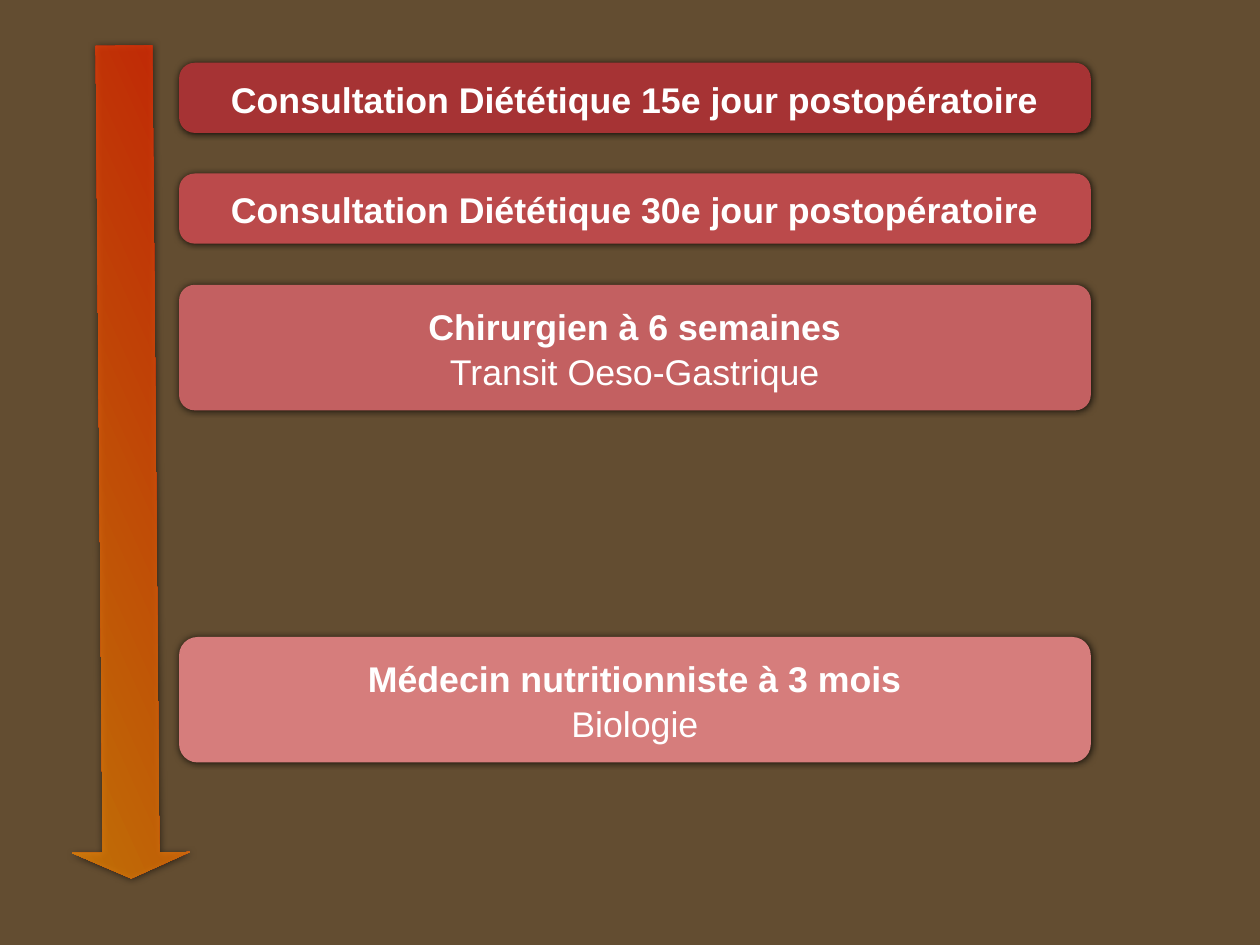
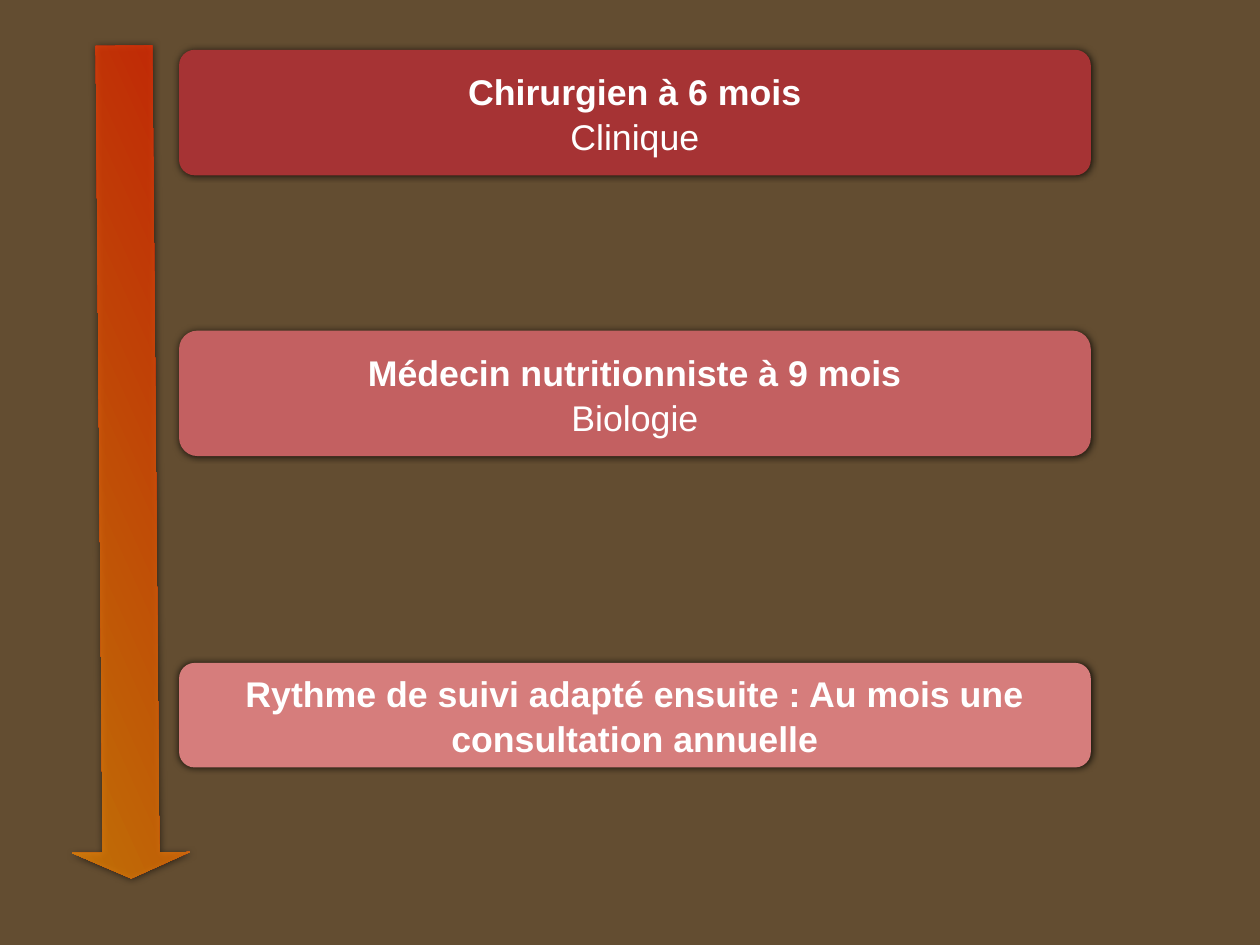
"""Build two slides showing the timeline of postoperative follow-up visits."""
from dataclasses import dataclass

from lxml import etree
from pptx import Presentation
from pptx import util as u
from pptx.dml.color import RGBColor
from pptx.enum import shapes, text
from pptx.oxml import ns

Pt = u.Pt


@dataclass(frozen=True)
class Theme:
    """Colours and type shared by the slides."""

    background: str = "634D31"
    arrow: tuple = ("FF2600", "FF9300")
    arrow_opacity: int = 69
    shades: tuple = ("A63334", "BB4A4B", "C36061", "D67D7C")
    ink: str = "FFFFFF"
    shadow: str = "000000"
    shadow_opacity: int = 80
    font: str = "Arial"
    size: int = 29
    leading: float = 1.05


class Timeline:
    """Draw the follow-up timeline with one theme, page by page."""

    LEFT, WIDTH = 145.5, 741
    ONE_LINE, WRAPPED, TWO_LINES = 57, 85, 102
    RADIUS, WIDE_RADIUS = 12.7, 15

    def __init__(self, theme):
        """Open an empty deck."""
        self.theme = theme
        self.deck = Presentation()
        self.deck.slide_width, self.deck.slide_height = Pt(1024), Pt(768)
        self.page = None

    def new_page(self):
        """Add a page with the background and the time arrow."""
        self.page = self.deck.slides.add_slide(self.deck.slide_layouts[6])
        fill = self.page.background.fill
        fill.solid()
        fill.fore_color.rgb = RGBColor.from_string(self.theme.background)
        self.arrow()

    def shape(self, kind, left, top, width, height):
        """Add an unlined shape with the soft shared shadow."""
        shape = self.page.shapes.add_shape(kind, Pt(left), Pt(top), Pt(width), Pt(height))
        shape.line.fill.background()
        shape.shadow.inherit = False
        effects = shape._element.spPr.find(ns.qn("a:effectLst"))
        shadow = etree.SubElement(
            effects, ns.qn("a:outerShdw"), blurRad=str(Pt(6)), dist="0",
            dir=str(315 * 60000), algn="ctr", rotWithShape="0")
        colour = etree.SubElement(shadow, ns.qn("a:srgbClr"), val=self.theme.shadow)
        self.opacity(colour, self.theme.shadow_opacity)
        return shape

    @staticmethod
    def opacity(colour, percent):
        """Set the opacity of a colour element."""
        etree.SubElement(colour, ns.qn("a:alpha"), val=str(percent * 1000))

    def arrow(self):
        """Draw the translucent arrow that runs down the page."""
        arrow = self.shape(shapes.MSO_SHAPE.RIGHT_ARROW, -234.7, 327.6, 676.8, 95.8)
        arrow.rotation = 89.5
        arrow.adjustments[0], arrow.adjustments[1] = 0.48, 0.22
        arrow.fill.gradient()
        arrow.fill.gradient_angle = 294
        for stop, position, colour in zip(arrow.fill.gradient_stops, (0, 1), self.theme.arrow):
            stop.position = position
            stop.color.rgb = RGBColor.from_string(colour)
        gradient = arrow._element.spPr.find(ns.qn("a:gradFill"))
        for colour in gradient.iter(ns.qn("a:srgbClr")):
            self.opacity(colour, self.theme.arrow_opacity)

    def visit(self, top, height, shade, title, detail=None, radius=RADIUS):
        """Draw a visit card with a bold title and an optional detail."""
        box = self.shape(shapes.MSO_SHAPE.ROUNDED_RECTANGLE, self.LEFT, top, self.WIDTH, height)
        box.adjustments[0] = radius / height
        box.fill.solid()
        box.fill.fore_color.rgb = RGBColor.from_string(self.theme.shades[shade])
        frame = box.text_frame
        frame.word_wrap = True
        frame.vertical_anchor = text.MSO_ANCHOR.MIDDLE
        frame.margin_left = frame.margin_right = Pt(4.3)
        frame.margin_top = frame.margin_bottom = Pt(4.3)
        self.line(frame.paragraphs[0], title, True)
        if detail:
            self.line(frame.add_paragraph(), detail, False)

    def line(self, para, words, bold):
        """Write one centred paragraph."""
        para.alignment = text.PP_ALIGN.CENTER
        para.line_spacing = self.theme.leading
        span = para.add_run()
        span.text = words
        span.font.name = self.theme.font
        span.font.size = Pt(self.theme.size)
        span.font.bold = bold
        span.font.color.rgb = RGBColor.from_string(self.theme.ink)


def main():
    """Build both pages and save the deck."""
    show = Timeline(Theme())

    show.new_page()
    for index, day in enumerate((15, 30)):
        show.visit(51 + 90 * index, show.ONE_LINE, index,
                   f"Consultation Diététique {day}e jour postopératoire")
    show.visit(231.5, show.TWO_LINES, 2, "Chirurgien à 6 semaines", "Transit Oeso-Gastrique")
    show.visit(517.7, show.TWO_LINES, 3, "Médecin nutritionniste à 3 mois", "Biologie",
               show.WIDE_RADIUS)

    show.new_page()
    show.visit(40.5, show.TWO_LINES, 0, "Chirurgien à 6 mois", "Clinique")
    show.visit(268.7, show.TWO_LINES, 2, "Médecin nutritionniste à 9 mois", "Biologie",
               show.WIDE_RADIUS)
    show.visit(538.7, show.WRAPPED, 3,
               "Rythme de suivi adapté ensuite : Au mois une consultation annuelle")

    show.deck.save("out.pptx")


if __name__ == "__main__":
    main()
